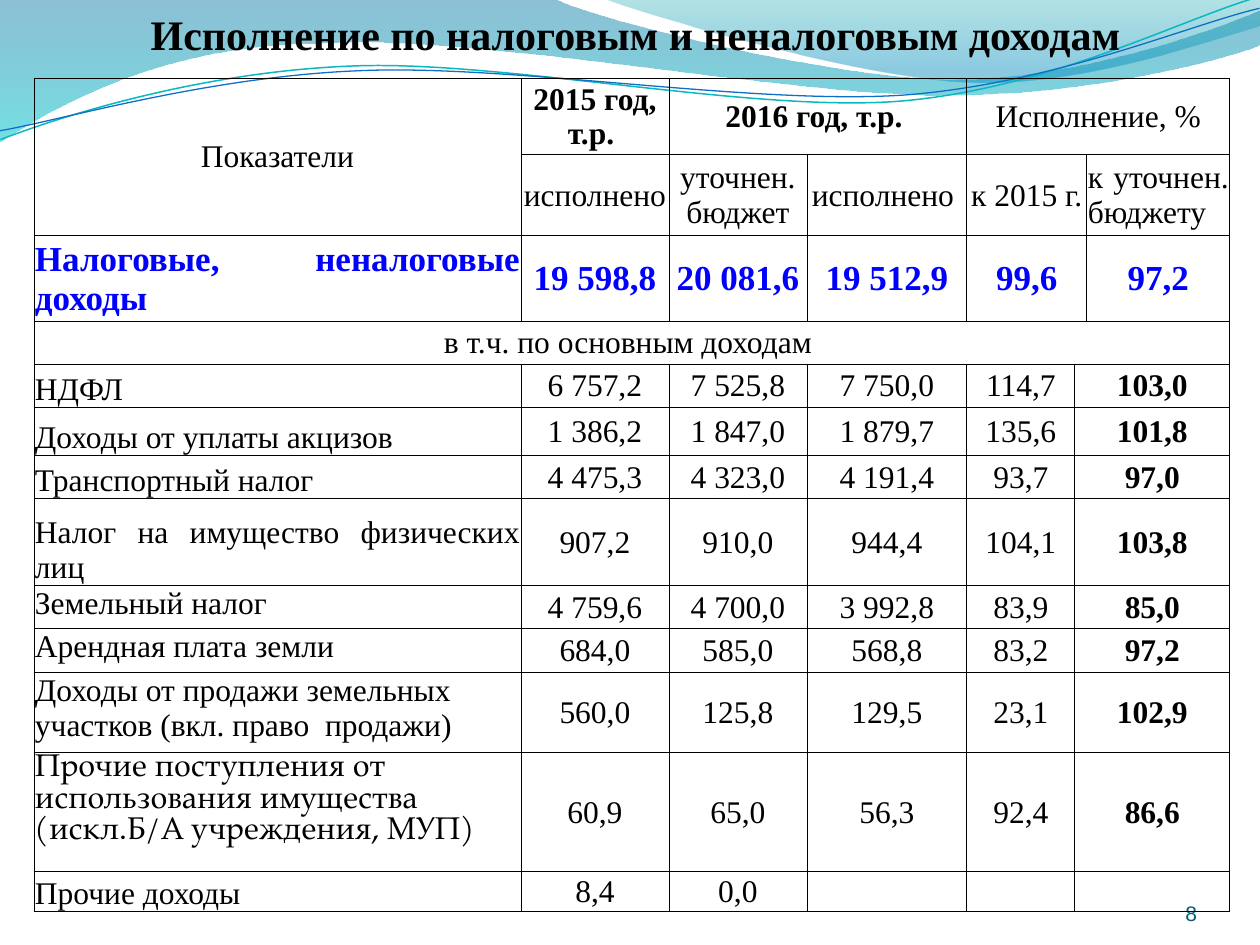
from dataclasses import dataclass

from lxml.etree import SubElement
from pptx import Presentation
from pptx.dml.color import RGBColor
from pptx.enum.text import MSO_ANCHOR, PP_ALIGN
from pptx.oxml.ns import qn
from pptx.util import Pt

SCALE = 914400 / 126


@dataclass(frozen=True)
class Theme:
    black: str = "000000"
    total: str = "0000FF"
    number: str = "045D75"
    serif: str = "Times New Roman"
    sans: str = "Arial"
    book: str = "TeX Gyre Pagella"
    title_size: int = 24
    total_size: int = 20
    body_size: int = 18
    number_size: int = 12
    left_wave: tuple = ((0, "0074A1", 45), (1, "00C6CF", 55))
    right_wave: tuple = ((0, "00A1A9", 30), (0.8, "008BBF", 45))
    teal_line: tuple = ("0AB8BF", 0.85)
    blue_line: tuple = ("0F6FC6", 0.75)
    border: float = 0.5


theme = Theme()


def px(value):
    return round(value * SCALE)


def write(frame, text, size=theme.body_size, font=theme.serif, color=theme.black,
          bold=False, align=PP_ALIGN.CENTER):
    frame.word_wrap = True
    para = frame.paragraphs[0]
    para.alignment = align
    if text:
        span = para.add_run()
        span.text = text
        span.font.size = Pt(size)
        span.font.name = font
        span.font.bold = bold
        span.font.color.rgb = RGBColor.from_string(color)


deck = Presentation()
deck.slide_width, deck.slide_height = px(1260), px(945)
page = deck.slides.add_slide(deck.slide_layouts[6])

left_wave = [
    (0, -1), (554, -1),
    (600, 21, 837, 79, 955, 79), (1075, 79, 1207, 33, 1260, 11),
    (1261, 45),
    (1239, 55, 1096, 96, 940, 95), (784, 95, 481, 35, 324, 43), (163, 44, 58, 105, -1, 142),
]
right_wave = [
    (604, -1),
    (641, 14, 859, 78, 969, 82), (1079, 87, 1211, 40, 1260, 26),
    (1260, 0),
]
teal_line = [
    (-2, 110),
    (58, 90, 199, 52, 350, 53), (499, 53, 745, 118, 896, 114), (1048, 109, 1184, 45, 1260, 27),
]
blue_line = [
    (-2, 101),
    (57, 94, 207, 57, 358, 58), (509, 58, 750, 111, 902, 108), (1052, 104, 1188, 52, 1262, 38),
]
LINE_TILT = 357.3
for outline, stops, stroke in (
    (left_wave, theme.left_wave, None),
    (right_wave, theme.right_wave, None),
    (teal_line, None, theme.teal_line),
    (blue_line, None, theme.blue_line),
):
    points = [(px(segment[i]), px(segment[i + 1]))
              for segment in outline for i in range(0, len(segment), 2)]
    builder = page.shapes.build_freeform(*points[0], scale=1.0)
    builder.add_line_segments(points[1:], close=stops is not None)
    wave = builder.convert_to_shape()
    wave.shadow.inherit = False

    nodes = list(wave._element.spPr.iter(qn("a:lnTo")))
    for segment in outline[1:]:
        count = len(segment) // 2
        group, nodes = nodes[:count], nodes[count:]
        if count == 3:
            curve = group[0].makeelement(qn("a:cubicBezTo"))
            group[0].addprevious(curve)
            for node in group:
                curve.append(node[0])
                node.getparent().remove(node)

    if stops:
        wave.line.fill.background()
        wave.fill.gradient()
        wave.fill.gradient_angle = 270
        for stop, (position, color, _) in zip(wave.fill.gradient_stops, stops):
            stop.position = position
            stop.color.rgb = RGBColor.from_string(color)
        colors = list(wave._element.spPr.iter(qn("a:srgbClr")))
        for element, (_, _, opacity) in zip(colors, stops):
            SubElement(element, qn("a:alpha"), val=str(opacity * 1000))
    else:
        wave.rotation = LINE_TILT
        wave.fill.background()
        wave.line.color.rgb = RGBColor.from_string(stroke[0])
        wave.line.width = Pt(stroke[1])

for text, area, top_margin, style in (
    ("Исполнение по налоговым и неналоговым доходам", (54, 0, 1163, 59), 6,
     dict(size=theme.title_size, bold=True)),
    ("8", (903, 861, 294, 65), 0,
     dict(size=theme.number_size, font=theme.sans, color=theme.number, align=PP_ALIGN.RIGHT)),
):
    box = page.shapes.add_textbox(*map(px, area))
    frame = box.text_frame
    frame.margin_left = frame.margin_right = frame.margin_bottom = 0
    frame.margin_top = px(top_margin)
    frame.vertical_anchor = MSO_ANCHOR.BOTTOM
    write(frame, text, **style)

widths = [487, 148, 138, 160, 108, 12, 143]
heights = [69, 81, 62, 43, 44, 48, 43, 87, 43, 44, 80, 119, 40]
rows = [
    ["Показатели", "2015 год, т.р. ", "2016 год, т.р. ", "", "Исполнение, %"],
    ["", "исполнено ", "уточнен. бюджет", "исполнено ", "к 2015 г.", "", "к уточнен. бюджету "],
    ["Налоговые, неналоговые доходы", "19 598,8", "20 081,6", "19 512,9", "99,6", "", "97,2"],
    ["в т.ч. по основным доходам "],
    ["НДФЛ", "6 757,2", "7 525,8", "7 750,0", "114,7", "103,0"],
    ["Доходы от уплаты акцизов ", "1 386,2", "1 847,0", "1 879,7", "135,6", "101,8"],
    ["Транспортный налог ", "4 475,3", "4 323,0", "4 191,4", "93,7", "97,0"],
    ["Налог на имущество физических лиц ", "907,2", "910,0", "944,4", "104,1", "103,8"],
    ["Земельный налог ", "4 759,6", "4 700,0", "3 992,8", "83,9", "85,0"],
    ["Арендная плата земли ", "684,0", "585,0", "568,8", "83,2", "97,2"],
    ["Доходы от продажи земельных участков (вкл. право  продажи)",
     "560,0", "125,8", "129,5", "23,1", "102,9"],
    ["Прочие поступления от использования имущества (искл.Б/А учреждения, МУП)",
     "60,9", "65,0", "56,3", "92,4", "86,6"],
    ["Прочие доходы", "8,4", "0,0"],
]
FIRST_INCOME, TOTAL = 4, 2
table = page.shapes.add_table(
    len(rows), len(widths), px(34), px(78), px(sum(widths)), px(sum(heights))
).table
table.first_row = table.horz_banding = False
for column, width in zip(table.columns, widths):
    column.width = px(width)
for row, height in zip(table.rows, heights):
    row.height = px(height)

merges = [(0, 0, 1, 0), (0, 2, 0, 3), (0, 4, 0, 6), (1, 4, 1, 5), (2, 4, 2, 5), (3, 0, 3, 6)]
merges += [(r, 5, r, 6) for r in range(FIRST_INCOME, len(rows))]
for top, left, bottom, right in merges:
    table.cell(top, left).merge(table.cell(bottom, right))

for r, values in enumerate(rows):
    for c in range(len(widths)):
        cell = table.cell(r, c)
        cell.margin_left = cell.margin_right = cell.margin_top = px(1)
        cell.margin_bottom = Pt(0.1)
        cell.vertical_anchor = MSO_ANCHOR.MIDDLE
        properties = cell._tc.get_or_add_tcPr()
        for side in ("a:lnL", "a:lnR", "a:lnT", "a:lnB"):
            edge = SubElement(properties, qn(side), w=str(Pt(theme.border)))
            SubElement(SubElement(edge, qn("a:solidFill")), qn("a:srgbClr"), val=theme.black)
        cell.fill.background()

        style = {}
        if r == TOTAL:
            style = dict(size=theme.total_size, color=theme.total, bold=True)
        elif (r == 0 and c in (1, 2)) or (r >= FIRST_INCOME and c == 5):
            style = dict(bold=True)
        if (r, c) in ((1, 6), (TOTAL, 0)):
            style["align"] = PP_ALIGN.JUSTIFY
        if r >= FIRST_INCOME and c == 0:
            style["align"] = PP_ALIGN.JUSTIFY if r < 10 else PP_ALIGN.LEFT
            cell.vertical_anchor = MSO_ANCHOR.TOP if 8 <= r <= 11 else MSO_ANCHOR.BOTTOM
            if r == 11:
                style["font"] = theme.book
        write(cell.text_frame, values[c] if c < len(values) else "", **style)

deck.save("out.pptx")
